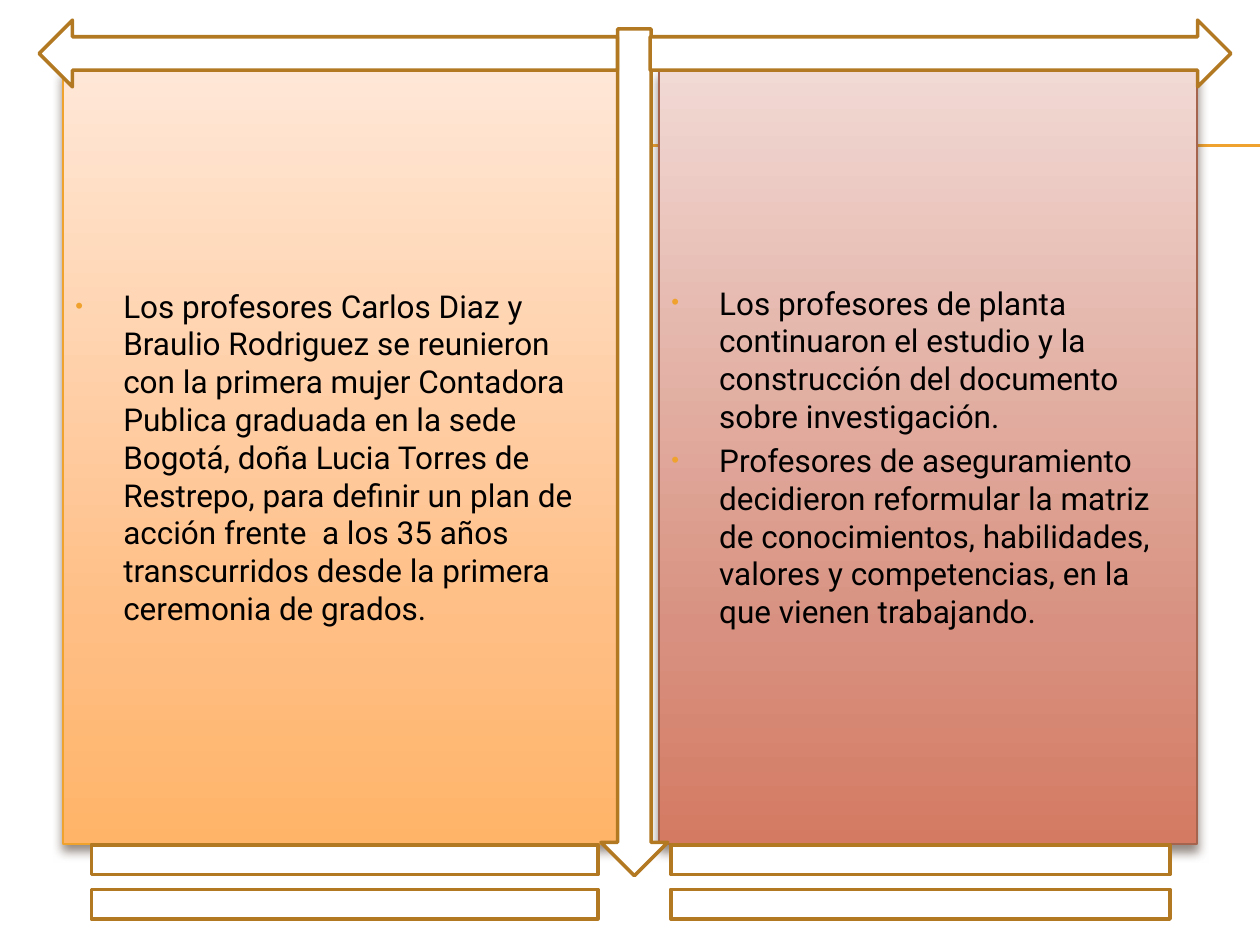
from copy import deepcopy

from lxml.etree import SubElement
from pptx import Presentation
from pptx.dml.color import RGBColor
from pptx.enum.shapes import MSO_CONNECTOR as Link, MSO_SHAPE as Form
from pptx.enum.text import MSO_ANCHOR as Anchor, PP_ALIGN as Align
from pptx.oxml.ns import qn
from pptx.util import Inches, Pt

COLORS = {
    "text": "000000",
    "accent": "F0A22E",
    "outline": "B27822",
    "paper": "FFFFFF",
    "shadow": "4E3B30",
    "brick": "A5644E",
}
ORANGE_STOPS = [(0, "FFE7D7"), (0.72, "FFBE84"), (1, "FFB468")]
BRICK_STOPS = [(0, "F1D9D4"), (0.72, "D89180"), (1, "D47A62")]

MEETING = [
    "Los profesores Carlos Diaz y Braulio Rodriguez se reunieron con la primera "
    "mujer Contadora Publica graduada en la sede Bogotá, doña Lucia Torres de "
    "Restrepo, para definir un plan de acción frente  a los 35 años transcurridos "
    "desde la primera ceremonia de grados.",
]
RESEARCH = [
    "Los profesores de planta continuaron el estudio y la construcción del "
    "documento sobre investigación.",
    "Profesores de aseguramiento decidieron reformular la matriz de conocimientos, "
    "habilidades, valores y competencias, en la que vienen trabajando.",
]


def rgb(name):
    return RGBColor.from_string(COLORS[name])


def apply_format(target, values):
    for name, value in values.items():
        setattr(target, name, value)


class SlideBuilder:
    """Holds the text style and the slide being filled."""

    font_format = {"name": "Roboto", "size": Pt(18), "color": "text"}
    frame_format = {"word_wrap": True, "vertical_anchor": Anchor.MIDDLE}

    def __init__(self, slide):
        self.slide = slide

    def rule(self, left, right, y):
        line = self.slide.shapes.add_connector(
            Link.STRAIGHT, Inches(left), Inches(y), Inches(right), Inches(y))
        line.line.color.rgb = rgb("accent")
        line.line.width = Pt(0.75)
        SubElement(line._element.spPr, qn("a:effectLst"))

    def shape(self, form, box, outline="outline", width=2):
        item = self.slide.shapes.add_shape(form, *map(Inches, box))
        item.shadow.inherit = False
        item.fill.solid()
        item.fill.fore_color.rgb = rgb("paper")
        item.line.color.rgb = rgb(outline)
        item.line.width = Pt(width)
        return item

    def panel(self, box, stops, outline, paragraphs):
        panel = self.shape(Form.RECTANGLE, box, outline, 0.79)
        self.gradient(panel, stops)
        self.drop_shadow(panel)
        frame = panel.text_frame
        apply_format(frame, self.frame_format)
        for index, text in enumerate(paragraphs):
            paragraph = frame.add_paragraph() if index else frame.paragraphs[0]
            self.bullet(paragraph, text, Pt(3.6 if index else 0))

    def gradient(self, panel, stops):
        """Fill from top to bottom with any number of stops."""
        panel.fill.gradient()
        panel.fill.gradient_angle = 270
        stop_list = panel._element.spPr.find(".//" + qn("a:gsLst"))
        for _ in stops[2:]:
            stop_list.append(deepcopy(stop_list[-1]))
        for stop, (position, color) in zip(panel.fill.gradient_stops, stops):
            stop.position = position
            stop.color.rgb = RGBColor.from_string(color)

    def drop_shadow(self, panel):
        effects = panel._element.spPr.find(qn("a:effectLst"))
        shadow = SubElement(effects, qn("a:outerShdw"), blurRad=str(Pt(6)),
                            dist=str(Pt(4)), dir="5400000", rotWithShape="0")
        color = SubElement(shadow, qn("a:srgbClr"), val=COLORS["shadow"])
        SubElement(color, qn("a:alpha"), val="60000")

    def bullet(self, paragraph, text, space_before):
        apply_format(paragraph, {"alignment": Align.LEFT, "space_before": space_before})
        props = paragraph._p.get_or_add_pPr()
        props.set("marL", str(Inches(0.38)))
        props.set("indent", str(-Inches(0.38)))
        bullet_color = SubElement(props, qn("a:buClr"))
        SubElement(bullet_color, qn("a:srgbClr"), val=COLORS["accent"])
        SubElement(props, qn("a:buSzPct"), val="70000")
        SubElement(props, qn("a:buFont"), typeface="Arial")
        SubElement(props, qn("a:buChar"), char="•")
        run = paragraph.add_run()
        run.text = text
        for name, value in self.font_format.items():
            if name == "color":
                run.font.color.rgb = rgb(value)
            else:
                setattr(run.font, name, value)


def main():
    deck = Presentation()
    apply_format(deck, {"slide_width": Inches(10), "slide_height": Inches(7.5)})
    builder = SlideBuilder(deck.slides.add_slide(deck.slide_layouts[6]))

    for y in (1.15, 1.16):
        builder.rule(0.56, 10, y)

    builder.panel((0.5, 0.55, 4.42, 6.15), ORANGE_STOPS, "accent", MEETING)
    builder.panel((5.23, 0.55, 4.27, 6.15), BRICK_STOPS, "brick", RESEARCH)

    for form, box in (
        (Form.DOWN_ARROW, (4.77, 0.23, 0.53, 6.72)),
        (Form.RIGHT_ARROW, (5.16, 0.16, 4.61, 0.53)),
        (Form.LEFT_ARROW, (0.31, 0.16, 4.59, 0.53)),
        (Form.MATH_EQUAL, (0, 6.5, 5.47, 1)),
        (Form.MATH_EQUAL, (4.61, 6.5, 5.39, 1)),
    ):
        builder.shape(form, box)

    deck.save("out.pptx")


if __name__ == "__main__":
    main()
